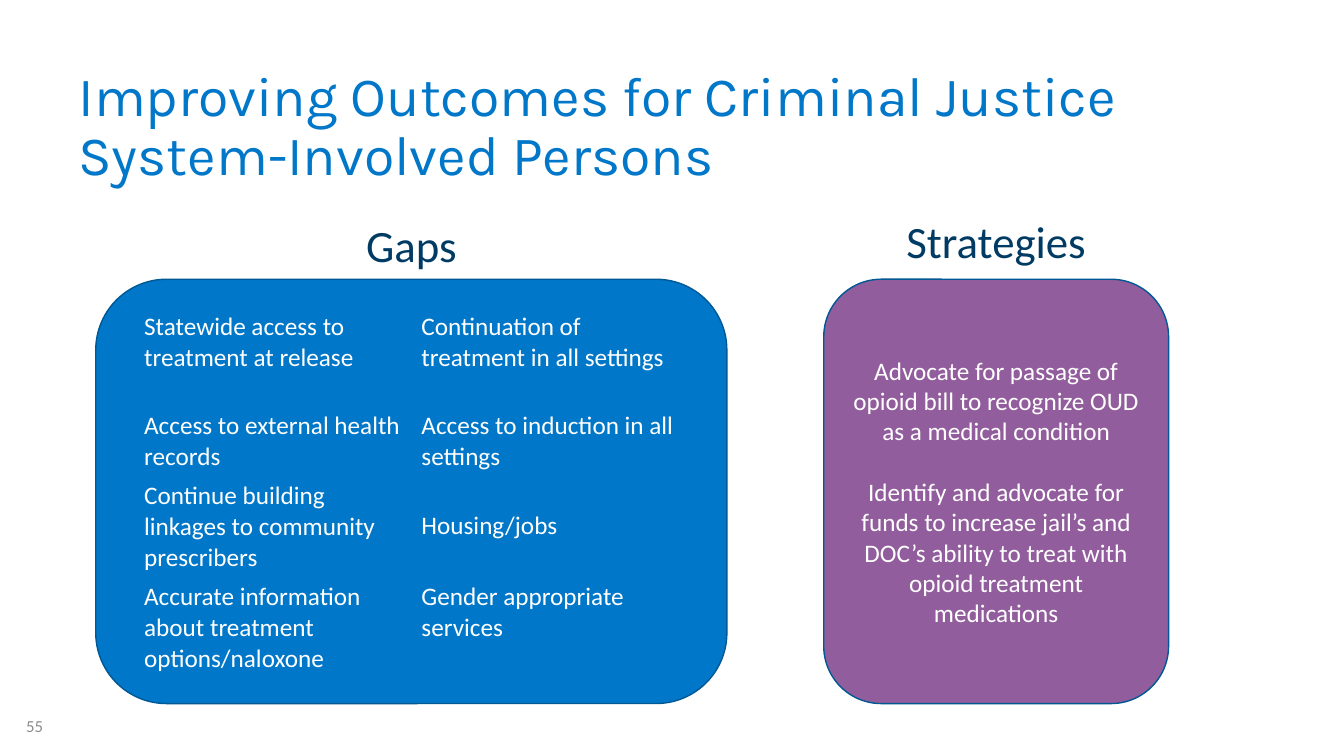
import dataclasses

import pptx
import pptx.dml.color
import pptx.enum.shapes
import pptx.enum.text
import pptx.oxml.ns
import pptx.util

Inches = pptx.util.Inches
ALIGN = pptx.enum.text.PP_ALIGN
ANCHOR = pptx.enum.text.MSO_ANCHOR
PLAIN_TABLE_STYLE = "{2D5ABB26-0587-4C30-8999-92F81FD0307C}"


@dataclasses.dataclass(frozen=True)
class Theme:
    """Colours, fonts and type sizes of the slide."""
    blue: str = "0077C8"
    purple: str = "925D9C"
    outline: str = "005894"
    navy: str = "003B64"
    grey: str = "8C8C8C"
    white: str = "FFFFFF"
    title_font: str = "Karla"
    body_font: str = "Calibri"
    title_size: float = 39.6
    heading_size: float = 32
    body_size: float = 18
    number_size: float = 12


THEME = Theme()

TITLE = "Improving Outcomes for Criminal Justice System-Involved Persons"
GAPS = [
    ("Statewide access to treatment at release", "Continuation of treatment in all settings"),
    ("Access to external health records", "Access to induction in all settings"),
    ("Continue building linkages to community prescribers", "Housing/jobs"),
    ("Accurate information about treatment options/naloxone", "Gender appropriate services"),
]
GAP_ROW_HEIGHTS = [0.98, 0.69, 0.96, 0.69]
STRATEGIES = [
    "Advocate for passage of opioid bill to recognize OUD as a medical condition",
    "Identify and advocate for funds to increase jail’s and DOC’s ability to treat with "
    "opioid treatment medications",
]


def rgb(value):
    """Return the colour object for a hex value."""
    return pptx.dml.color.RGBColor.from_string(value)


def style_text(frame, size, color, font=THEME.body_font, align=ALIGN.LEFT):
    """Format every paragraph and run of a text frame."""
    frame.word_wrap = True
    for para in frame.paragraphs:
        para.alignment = align
        for span in para.runs:
            span.font.name = font
            span.font.size = pptx.util.Pt(size)
            span.font.color.rgb = rgb(color)


def add_text(page, box, text, size, color, anchor=ANCHOR.TOP, **style):
    """Add a text box and return its text frame."""
    frame = page.shapes.add_textbox(*map(Inches, box)).text_frame
    frame.text = text
    frame.vertical_anchor = anchor
    style_text(frame, size, color, **style)
    return frame


def add_panel(page, box, fill):
    """Add an outlined rounded panel."""
    panel = page.shapes.add_shape(
        pptx.enum.shapes.MSO_SHAPE.ROUNDED_RECTANGLE, *map(Inches, box))
    panel.shadow.inherit = False
    panel.fill.solid()
    panel.fill.fore_color.rgb = rgb(fill)
    panel.line.color.rgb = rgb(THEME.outline)
    panel.line.width = pptx.util.Pt(1)
    return panel


def add_title(page, box):
    """Add the slide title."""
    frame = add_text(page, box, TITLE, THEME.title_size, THEME.blue,
                     anchor=ANCHOR.MIDDLE, font=THEME.title_font)
    frame.paragraphs[0].line_spacing = 0.9


def add_gaps(page, box):
    """Add the gaps heading, panel and table."""
    left, top, width, height = box
    add_panel(page, box, THEME.blue)
    holder = page.shapes.add_table(
        len(GAPS), 2, Inches(left + 0.38), Inches(top + 0.27),
        Inches(5.5), Inches(sum(GAP_ROW_HEIGHTS)))
    style_id = holder.element.find(".//" + pptx.oxml.ns.qn("a:tableStyleId"))
    style_id.text = PLAIN_TABLE_STYLE
    table = holder.table
    table.first_row = table.horz_banding = False
    for row, row_height, texts in zip(table.rows, GAP_ROW_HEIGHTS, GAPS):
        row.height = Inches(row_height)
        for cell, text in zip(row.cells, texts):
            cell.text = text
            cell.fill.solid()
            cell.fill.fore_color.rgb = rgb(THEME.blue)
            if text == "Housing/jobs":
                cell.vertical_anchor = ANCHOR.MIDDLE
            style_text(cell.text_frame, THEME.body_size, THEME.white)
    add_text(page, (left + width / 2 - 0.96, top - 0.66, 1.92, 0.64), "Gaps",
             THEME.heading_size, THEME.navy, align=ALIGN.CENTER)


def add_strategies(page, box):
    """Add the strategies heading and panel."""
    left, top, width, height = box
    add_text(page, (left + width / 2 - 1.29, top - 0.7, 2.58, 0.64), "Strategies",
             THEME.heading_size, THEME.navy, align=ALIGN.CENTER)
    frame = add_panel(page, box, THEME.purple).text_frame
    frame.text = "\n".join(STRATEGIES)
    frame.vertical_anchor = ANCHOR.MIDDLE
    style_text(frame, THEME.body_size, THEME.white, align=ALIGN.CENTER)
    for para in frame.paragraphs[1:]:
        para.space_before = pptx.util.Pt(22)


def main():
    """Build and save the slide."""
    deck = pptx.Presentation()
    deck.slide_width, deck.slide_height = Inches(13.33), Inches(7.5)
    page = deck.slides.add_slide(deck.slide_layouts[6])
    add_title(page, (0.68, 0.69, 11.91, 1.16))
    add_text(page, (0.16, 7.11, 1.01, 0.18), "55", THEME.number_size, THEME.grey,
             anchor=ANCHOR.MIDDLE)
    add_gaps(page, (0.95, 2.77, 6.26, 4.21))
    add_strategies(page, (8.17, 2.77, 3.42, 4.21))
    deck.save("out.pptx")


if __name__ == "__main__":
    main()
